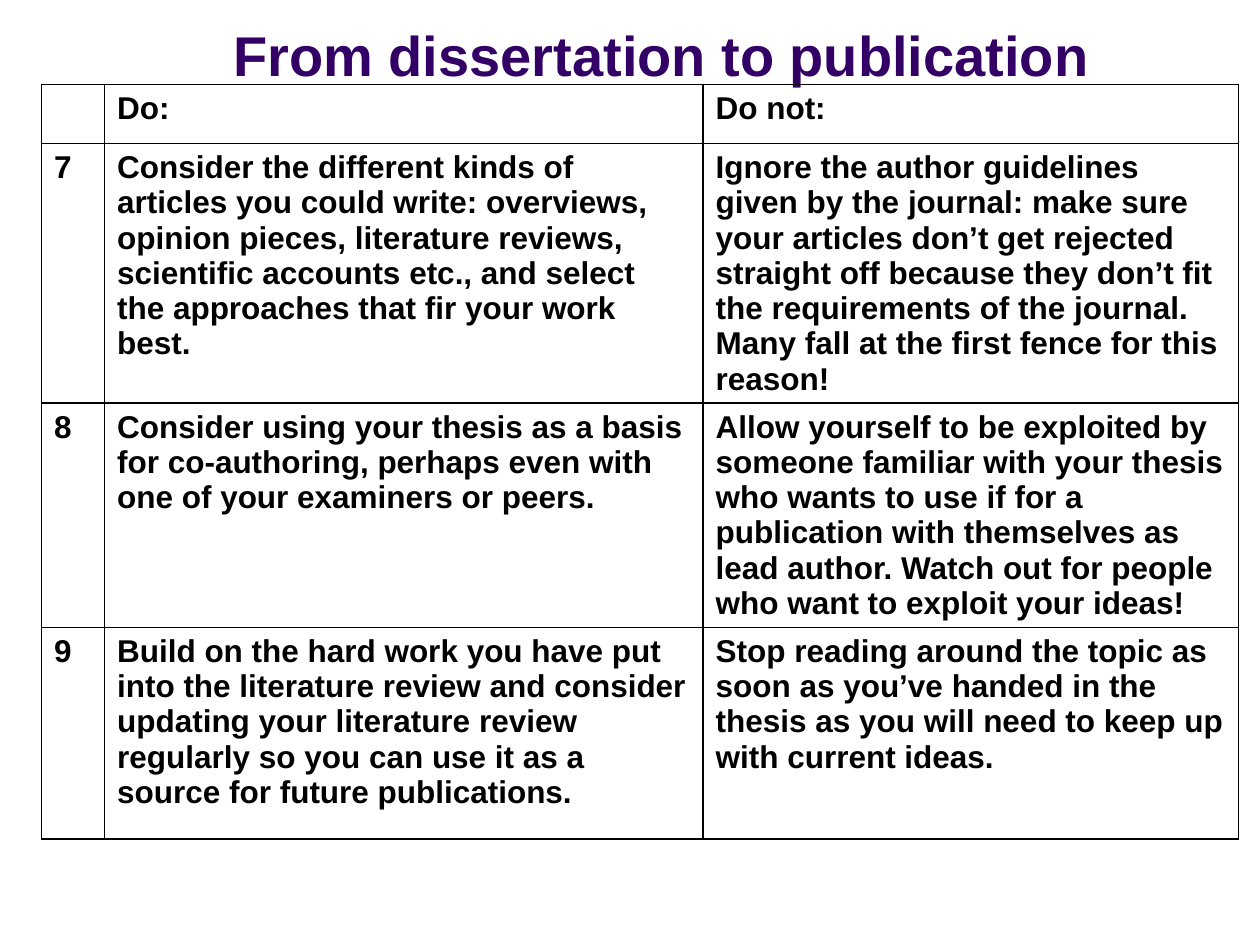
from lxml import etree
from pptx import Presentation
from pptx import util as u
from pptx.dml.color import RGBColor
from pptx.enum import text
from pptx.oxml import ns

PURPLE = RGBColor(0x33, 0x00, 0x66)
BLACK = RGBColor(0x00, 0x00, 0x00)
COLUMNS = [0.5, 4.75, 4.25]
ROWS = [0.47, 1.53, 1.58, 1.68]
ADVICE = [
    ("", "Do:", "Do not:"),
    ("7",
     "Consider the different kinds of articles you could write: overviews, opinion pieces, "
     "literature reviews, scientific accounts etc., and select the approaches that fir your work best.",
     "Ignore the author guidelines given by the journal: make sure your articles don’t get rejected "
     "straight off because they don’t fit the requirements of the journal. "
     "Many fall at the first fence for this reason!"),
    ("8",
     "Consider using your thesis as a basis for co-authoring, perhaps even with one of your "
     "examiners or peers.",
     "Allow yourself to be exploited by someone familiar with your thesis who wants to use if for a "
     "publication with themselves as lead author. Watch out for people who want to exploit your ideas!"),
    ("9",
     "Build on the hard work you have put into the literature review and consider updating your "
     "literature review regularly so you can use it as a source for future publications.",
     "Stop reading around the topic as soon as you’ve handed in the thesis as you will need to keep "
     "up with current ideas."),
]


def add_run(paragraph, words, size, color):
    run = paragraph.add_run()
    run.text = words
    run.font.name = "Arial"
    run.font.size = u.Pt(size)
    run.font.bold = True
    run.font.color.rgb = color


def add_borders(cell):
    properties = cell._tc.get_or_add_tcPr()
    for position, side in enumerate(("lnL", "lnR", "lnT", "lnB")):
        line = etree.Element(ns.qn(f"a:{side}"), w=str(u.Pt(1)))
        fill = etree.SubElement(line, ns.qn("a:solidFill"))
        etree.SubElement(fill, ns.qn("a:srgbClr"), val=str(BLACK))
        properties.insert(position, line)


presentation = Presentation()
presentation.slide_width = u.Inches(10)
presentation.slide_height = u.Inches(7.5)
slide = presentation.slides.add_slide(presentation.slide_layouts[5])

title = slide.shapes.title
title.left, title.top = u.Inches(0.5), u.Inches(0.17)
title.width, title.height = u.Inches(8.25), u.Inches(0.58)
title.text_frame.auto_size = text.MSO_AUTO_SIZE.NONE
title.text_frame.vertical_anchor = text.MSO_ANCHOR.BOTTOM
paragraph = title.text_frame.paragraphs[0]
paragraph.alignment = text.PP_ALIGN.RIGHT
add_run(paragraph, "From dissertation to publication", 32, PURPLE)

table = slide.shapes.add_table(
    len(ROWS), len(COLUMNS), u.Inches(0.33), u.Inches(0.67),
    u.Inches(sum(COLUMNS)), u.Inches(sum(ROWS))).table
table.first_row = False
table.horz_banding = False
for column, width in zip(table.columns, COLUMNS):
    column.width = u.Inches(width)
for row, height, entries in zip(table.rows, ROWS, ADVICE):
    row.height = u.Inches(height)
    for cell, words in zip(row.cells, entries):
        cell.fill.background()
        add_borders(cell)
        if words:
            add_run(cell.text_frame.paragraphs[0], words, 18, BLACK)

presentation.save("out.pptx")
